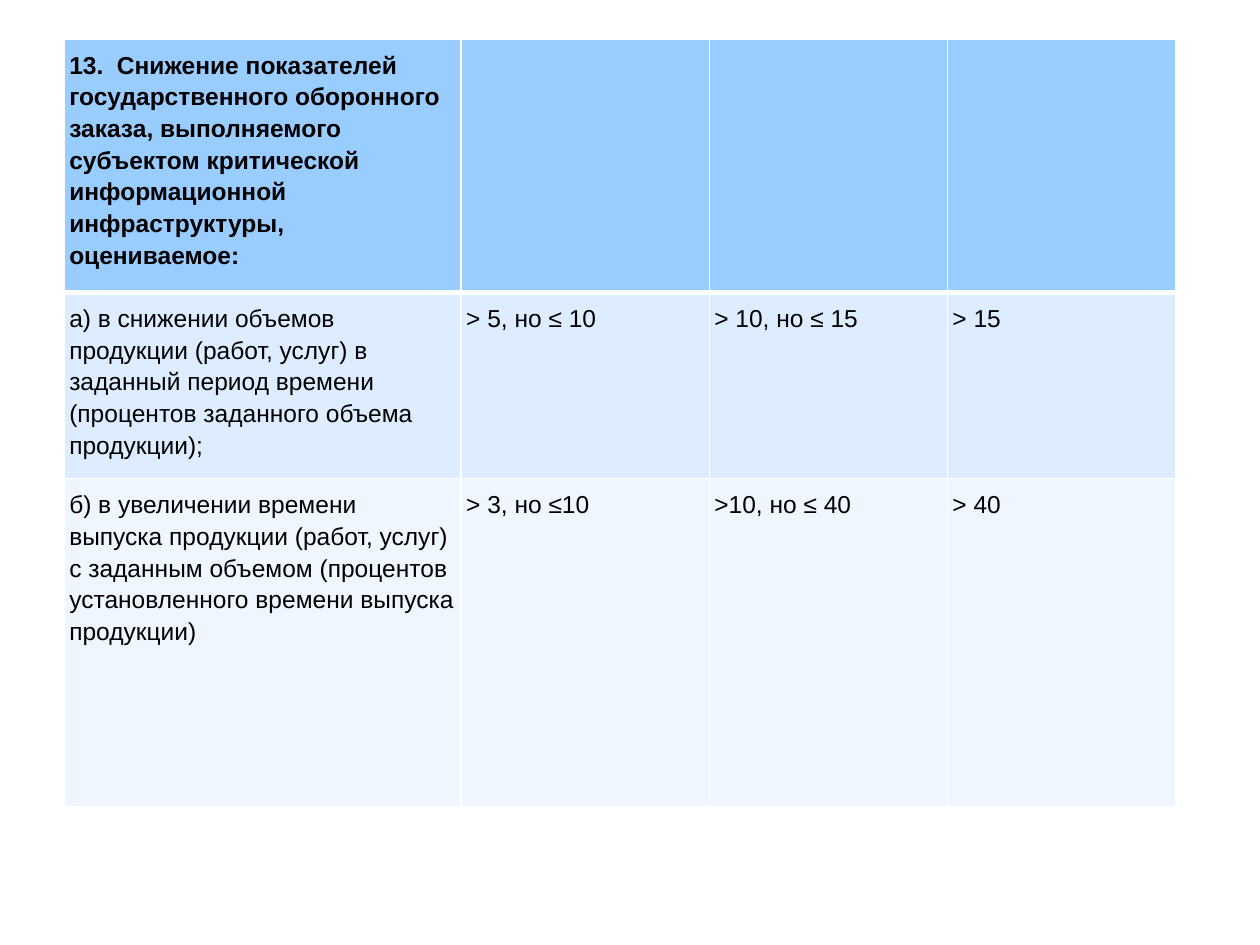
from lxml import etree
from pptx import Presentation
from pptx.dml.color import RGBColor
from pptx.oxml import ns
from pptx.util import Inches, Pt

BLACK = RGBColor(0x00, 0x00, 0x00)
WHITE = RGBColor(0xFF, 0xFF, 0xFF)
HEADER_BLUE = RGBColor(0x99, 0xCC, 0xFF)
LIGHT_BLUE = RGBColor(0xDE, 0xEC, 0xFF)
PALE_BLUE = RGBColor(0xEF, 0xF6, 0xFF)

COLUMN_WIDTHS = (3.15, 1.97, 1.89, 1.81)
ROWS = (
    (2.01, HEADER_BLUE, (
        "13.  Снижение показателей государственного оборонного заказа, "
        "выполняемого субъектом критической информационной "
        "инфраструктуры, оцениваемое:", "", "", "")),
    (1.48, LIGHT_BLUE, (
        "а) в снижении объемов продукции (работ, услуг) в заданный период "
        "времени (процентов заданного объема продукции);",
        "> 5, но ≤ 10", "> 10, но ≤ 15", "> 15")),
    (2.6, PALE_BLUE, (
        "б) в увеличении времени выпуска продукции (работ, услуг) с заданным "
        "объемом (процентов установленного времени выпуска продукции)",
        "> 3, но ≤10", ">10, но ≤ 40", "> 40")),
)


def set_borders(cell, widths):
    properties = cell._tc.get_or_add_tcPr()
    for position, (side, width) in enumerate(widths.items()):
        line = etree.Element(ns.qn(f"a:ln{side}"), w=str(Pt(width)))
        fill = etree.SubElement(line, ns.qn("a:solidFill"))
        etree.SubElement(fill, ns.qn("a:srgbClr"), val=str(WHITE))
        properties.insert(position, line)


def write_cell(cell, words, bold):
    cell.margin_left = cell.margin_right = Inches(0.04)
    cell.margin_top = cell.margin_bottom = Inches(0.07)
    if not words:
        return
    para = cell.text_frame.paragraphs[0]
    para.line_spacing = 1.15
    span = para.add_run()
    span.text = words
    span.font.name = "Arial"
    span.font.size = Pt(14)
    span.font.bold = bold
    span.font.color.rgb = BLACK


def add_criteria_table(page):
    frame = page.shapes.add_table(
        len(ROWS), len(COLUMN_WIDTHS), Inches(0.51), Inches(0.31),
        Inches(sum(COLUMN_WIDTHS)), Inches(sum(row[0] for row in ROWS)))
    table = frame.table
    for column, width in zip(table.columns, COLUMN_WIDTHS):
        column.width = Inches(width)
    for index, (height, color, texts) in enumerate(ROWS):
        table.rows[index].height = Inches(height)
        top = 3 if index == 1 else 1
        bottom = 3 if index == 0 else 1
        for cell, words in zip(table.rows[index].cells, texts):
            cell.fill.solid()
            cell.fill.fore_color.rgb = color
            set_borders(cell, {"L": 1, "R": 1, "T": top, "B": bottom})
            write_cell(cell, words, bold=index == 0)


def main():
    deck = Presentation()
    deck.slide_width = Inches(10)
    deck.slide_height = Inches(7.5)
    page = deck.slides.add_slide(deck.slide_layouts[6])
    add_criteria_table(page)
    deck.save("out.pptx")


if __name__ == "__main__":
    main()
